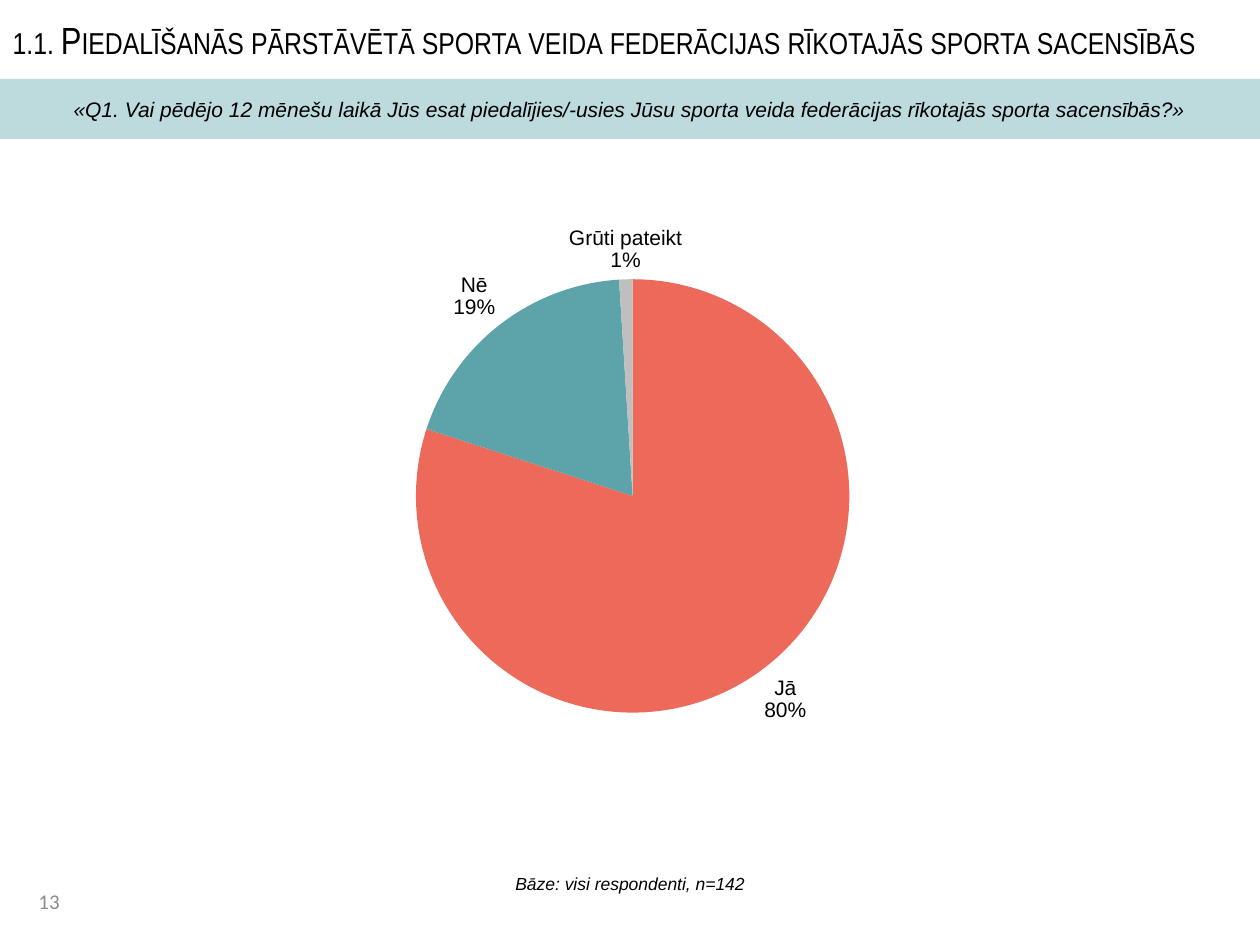
from dataclasses import dataclass

from lxml import etree
from pptx import Presentation
from pptx import util as u
from pptx.chart.data import CategoryChartData
from pptx.dml.color import RGBColor
from pptx.enum import chart as ch, shapes, text
from pptx.oxml import parse_xml
from pptx.oxml.ns import nsdecls, qn

PX = 914400 / 126


@dataclass(frozen=True)
class Theme:
    black: str = "000000"
    grey: str = "8C8C8C"
    coral: str = "ED6A5A"
    teal: str = "5CA4A9"
    silver: str = "BFBFBF"
    body: str = "Arial"
    heading: str = "Arial Narrow"
    number: str = "Calibri"
    title_size: float = 21.6
    label_size: int = 12
    note_size: int = 10


T = Theme()


def px(n):
    return u.Emu(round(n * PX))


def box(*lengths):
    return [px(n) for n in lengths]


def style(font, size, name=T.body, color=T.black, italic=False):
    font.size, font.name, font.italic = u.Pt(size), name, italic
    font.bold = False
    font.color.rgb = RGBColor.from_string(color)


def write(sp, words, size, align=text.PP_ALIGN.CENTER, **look):
    tf = sp.text_frame
    tf.text = words
    tf.word_wrap = True
    tf.auto_size = text.MSO_AUTO_SIZE.NONE
    tf.vertical_anchor = text.MSO_ANCHOR.MIDDLE
    p = tf.paragraphs[0]
    p.alignment = align
    r = p.runs[0]
    style(r.font, size, **look)
    return r


def add_title(s, words, place):
    sp = s.shapes.title
    sp.left, sp.top, sp.width, sp.height = box(*place)
    r = write(sp, words, T.title_size, text.PP_ALIGN.LEFT, name=T.heading)
    r.font._element.set("cap", "small")


def add_text(s, words, place, size, **look):
    write(s.shapes.add_textbox(*box(*place)), words, size, **look)


def add_band(s, words, place):
    sp = s.shapes.add_shape(shapes.MSO_SHAPE.RECTANGLE, *box(*place))
    sp.shadow.inherit = False
    sp.fill.solid()
    sp.fill.fore_color.rgb = RGBColor.from_string(T.teal)
    color = sp._element.spPr.find(qn("a:solidFill"))[0]
    etree.SubElement(color, qn("a:alpha"), val="40000")
    sp.line.fill.background()
    write(sp, words, T.label_size, italic=True)


def set_plot_area(chart, x, y, w, h):
    area = chart._chartSpace.chart.plotArea
    for old in area.findall(qn("c:layout")):
        area.remove(old)
    sizes = "".join(f'<c:{k} val="{v}"/>' for k, v in zip("xywh", (x, y, w, h)))
    area.insert(0, parse_xml(
        f'<c:layout {nsdecls("c")}><c:manualLayout><c:layoutTarget val="inner"/>'
        f'<c:xMode val="edge"/><c:yMode val="edge"/>{sizes}'
        '</c:manualLayout></c:layout>'))


def add_pie(s, answers, place):
    data = CategoryChartData()
    data.categories = [name for name, _, _ in answers]
    data.add_series("Series 1", [value for _, value, _ in answers])
    chart = s.shapes.add_chart(ch.XL_CHART_TYPE.PIE, *box(*place), data).chart
    chart.has_legend = chart.has_title = False
    style(chart.font, T.note_size)
    set_plot_area(chart, 0.22, 0.14, 0.49, 0.72)
    plot = chart.plots[0]
    plot.vary_by_categories = True
    series = plot.series[0]
    for i, (_, _, color) in enumerate(answers):
        fmt = series.points[i].format
        fmt.fill.solid()
        fmt.fill.fore_color.rgb = RGBColor.from_string(color)
        fmt.line.fill.background()
    labels = series.data_labels
    labels.show_category_name = labels.show_percentage = True
    labels.show_value = False
    labels.number_format, labels.number_format_is_linked = "0%", False
    labels.position = ch.XL_LABEL_POSITION.OUTSIDE_END
    style(labels.font, T.label_size)


def main():
    prs = Presentation()
    prs.slide_width, prs.slide_height = u.Inches(10), u.Inches(7.5)
    s = prs.slides.add_slide(prs.slide_layouts[5])
    add_title(s, "1.1. Piedalīšanās pārstāvētā sporta veida federācijas "
              "rīkotajās sporta sacensībās", (0, 0, 1260, 79))
    add_text(s, "13", (26, 876, 134, 50), T.label_size,
             align=text.PP_ALIGN.LEFT, name=T.number, color=T.grey)
    add_text(s, "Bāze: visi respondenti, n=142", (0, 854, 1260, 59),
             T.note_size, italic=True)
    add_band(s, "«Q1. Vai pēdējo 12 mēnešu laikā Jūs esat piedalījies/-usies "
             "Jūsu sporta veida federācijas rīkotajās sporta sacensībās?»",
             (0, 79, 1260, 60))
    add_pie(s, [("Jā", 80, T.coral), ("Nē", 19, T.teal),
                ("Grūti pateikt", 1, T.silver)], (184, 195, 965, 602))
    prs.save("out.pptx")


if __name__ == "__main__":
    main()
